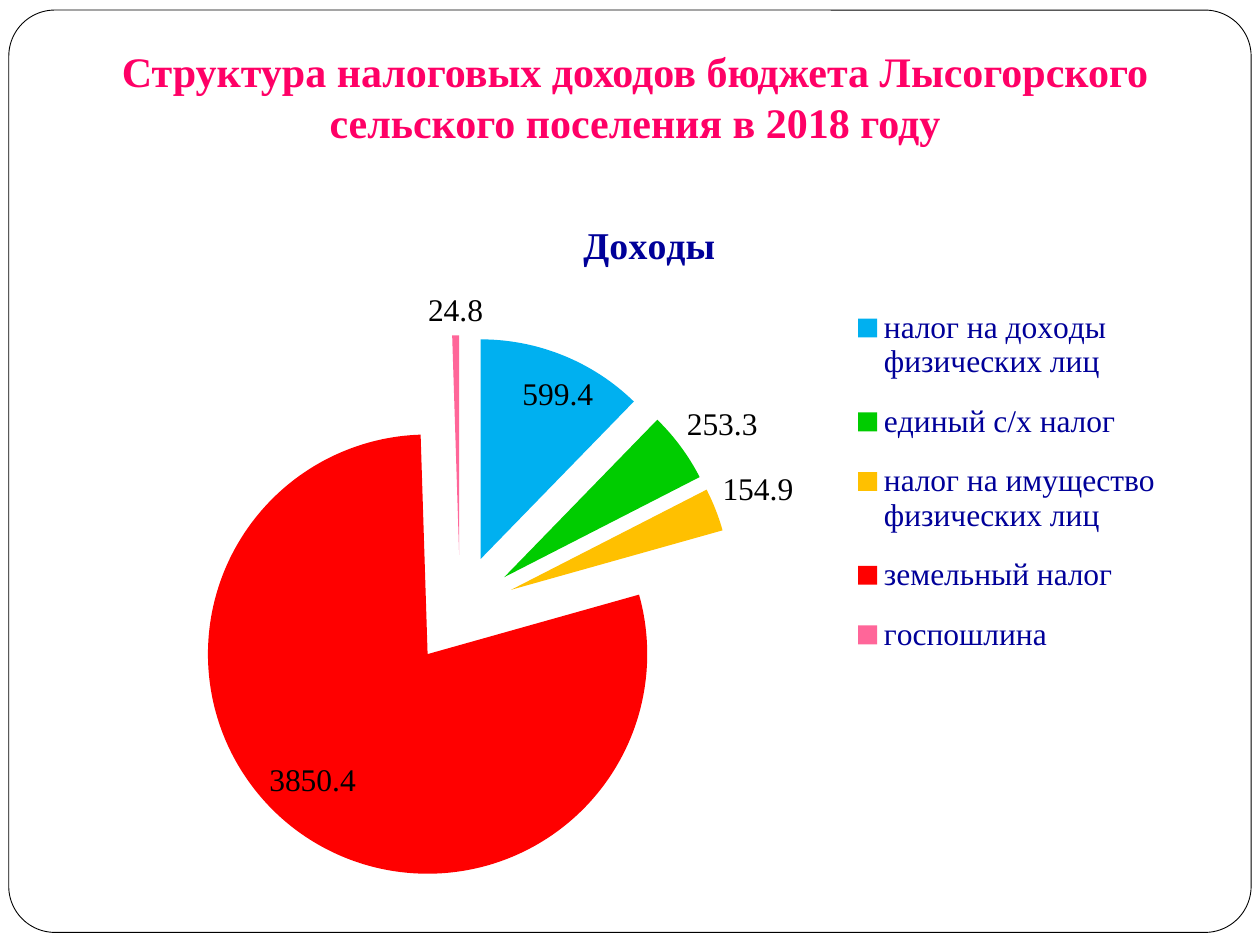
import pptx
import pptx.util
import pptx.chart.data
import pptx.enum.chart
import pptx.enum.shapes
import pptx.enum.text
from pptx.dml.color import RGBColor
from pptx.oxml import parse_xml
from pptx.oxml.ns import nsdecls
from pptx.util import Inches, Pt

# Content
TITLE = "Структура налоговых доходов бюджета Лысогорского сельского поселения в 2018 году"
CHART_TITLE = "Доходы"
INCOME = [
    ("налог на доходы физических лиц", 599.4, "00B0F0"),
    ("единый с/х налог", 253.3, "00CC00"),
    ("налог на имущество физических лиц", 154.9, "FFC000"),
    ("земельный налог", 3850.4, "FF0000"),
    ("госпошлина", 24.8, "FF6699"),
]
THEME = {
    "font": "Times New Roman",
    "title": "FF0066", "heading": "000099", "text": "000000", "paper": "FFFFFF",
    "title_size": 24, "heading_size": 21.6, "text_size": 18,
}
# Parts of the chart as fractions of its frame: x, y, width, height
PIE_AREA = (0.07, 0.2, 0.51, 0.77)
LEGEND_AREA = (0.68, 0.13, 0.3, 0.55)
EXPLOSION = 25


def color(name):
    return RGBColor.from_string(THEME[name])


def style_font(font, color_name, size_name, bold=False):
    font.name = THEME["font"]
    font.size = Pt(THEME[size_name])
    font.bold = bold
    font.color.rgb = color(color_name)


def manual_layout(area, inner=False):
    target = '<c:layoutTarget val="inner"/>' if inner else ""
    modes = "".join(f'<c:{axis}Mode val="edge"/>' for axis in "xy")
    sizes = "".join(f'<c:{key} val="{value}"/>' for key, value in zip("xywh", area))
    return parse_xml(f'<c:layout {nsdecls("c")}><c:manualLayout>{target}{modes}{sizes}'
                     '</c:manualLayout></c:layout>')


def set_layout(element, layout, position):
    for old in element.findall(layout.tag):
        element.remove(old)
    element.insert(position, layout)


prs = pptx.Presentation()
prs.slide_width, prs.slide_height = Inches(10), Inches(7.5)
s = prs.slides.add_slide(prs.slide_layouts[5])

# Rounded frame, behind everything
frame = s.shapes.add_shape(pptx.enum.shapes.MSO_SHAPE.ROUNDED_RECTANGLE,
                           Inches(0.07), Inches(0.08), Inches(9.86), Inches(7.32))
frame.adjustments[0] = 0.05
frame.shadow.inherit = False
frame.fill.solid()
frame.fill.fore_color.rgb = color("paper")
frame.line.color.rgb = color("text")
frame.line.width = Pt(0.5)
s.shapes._spTree.insert(2, frame._element)

# Title
title = s.shapes.title
title.left, title.top, title.width, title.height = map(Inches, (0.47, 0.31, 9.14, 0.91))
tf = title.text_frame
tf.word_wrap = True
tf.vertical_anchor = pptx.enum.text.MSO_ANCHOR.MIDDLE
p = tf.paragraphs[0]
p.alignment = pptx.enum.text.PP_ALIGN.CENTER
r = p.add_run()
r.text = TITLE
style_font(r.font, "title", "title_size", bold=True)

# Pie chart
data = pptx.chart.data.CategoryChartData()
data.categories = [name for name, _, _ in INCOME]
data.add_series(CHART_TITLE, [value for _, value, _ in INCOME])
chart = s.shapes.add_chart(pptx.enum.chart.XL_CHART_TYPE.PIE, Inches(0.86), Inches(1.53),
                           Inches(8.59), Inches(5.66), data).chart
style_font(chart.font, "text", "text_size")

chart.has_title = True
r = chart.chart_title.text_frame.paragraphs[0].add_run()
r.text = CHART_TITLE
style_font(r.font, "heading", "heading_size", bold=True)

chart.has_legend = True
legend = chart.legend
legend.position = pptx.enum.chart.XL_LEGEND_POSITION.RIGHT
legend.include_in_layout = False
style_font(legend.font, "heading", "text_size")
set_layout(legend._element, manual_layout(LEGEND_AREA), 1)

# Slices and value labels
plot = chart.plots[0]
plot.vary_by_categories = True
series = plot.series[0]
for i, (_, _, slice_color) in enumerate(INCOME):
    fill = series.points[i].format.fill
    fill.solid()
    fill.fore_color.rgb = RGBColor.from_string(slice_color)
first_point = series._element.find(pptx.oxml.ns.qn("c:dPt"))
first_point.addprevious(parse_xml(f'<c:explosion {nsdecls("c")} val="{EXPLOSION}"/>'))
labels = series.data_labels
labels.show_value = True
labels.position = pptx.enum.chart.XL_LABEL_POSITION.BEST_FIT
style_font(labels.font, "text", "text_size")
set_layout(plot._element.getparent(), manual_layout(PIE_AREA, inner=True), 0)

prs.save("out.pptx")
